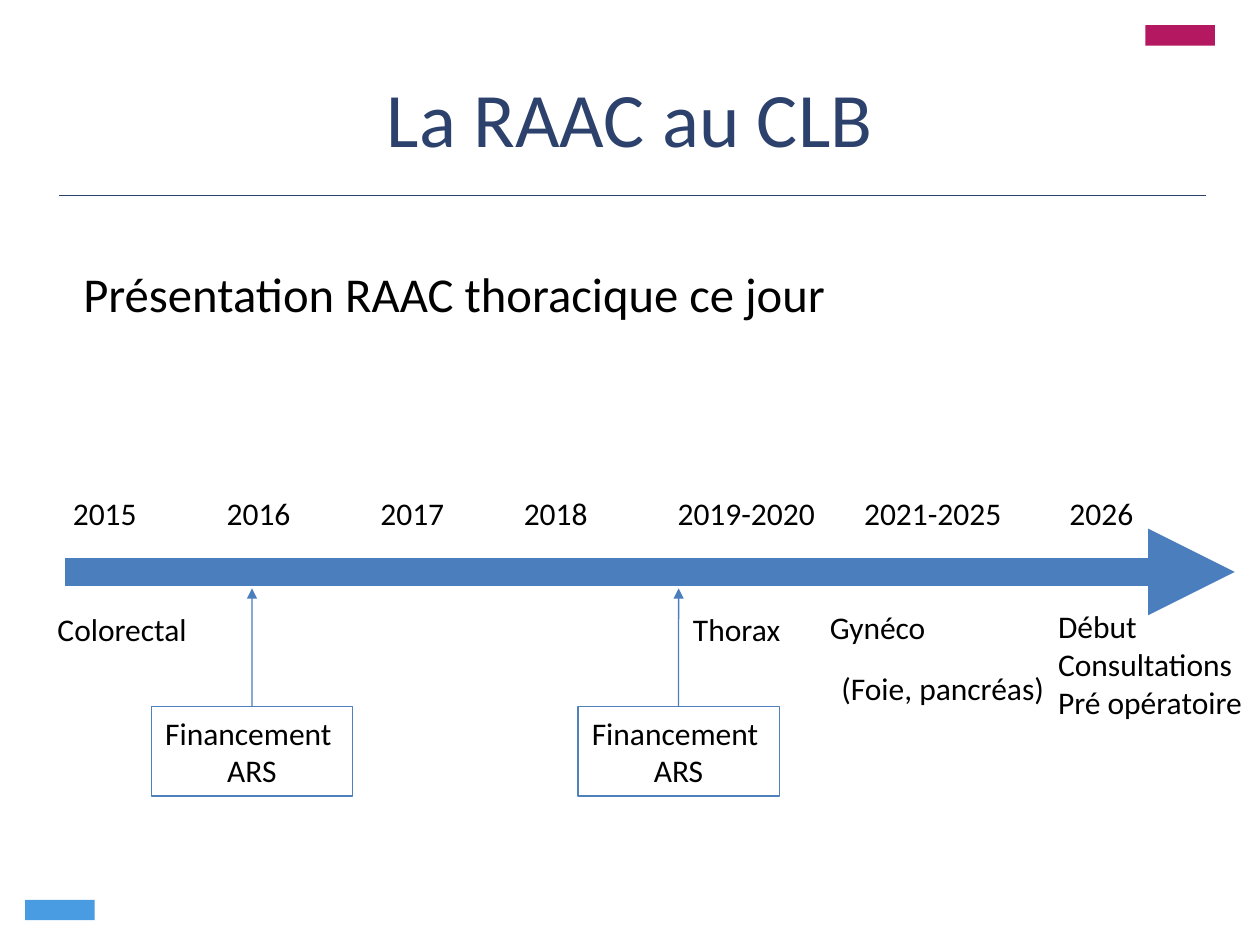
import pptx
import pptx.util
import pptx.dml.color
import pptx.enum.shapes
import pptx.enum.text
import pptx.oxml.ns
from lxml import etree
from pptx.util import Cm, Pt


def rgb(value):
    return pptx.dml.color.RGBColor.from_string(value)


class SlideBuilder:
    font = "Calibri"
    ink = "000000"
    navy = "2C426C"
    blue = "4B7EBC"
    outline = "4F81BD"
    size = 18

    def __init__(self, s):
        self.s = s

    def set_text(self, tf, lines, size=None, color=None, align=None):
        tf.text = "\n".join(lines)
        for p in tf.paragraphs:
            p.font.name = self.font
            p.font.size = Pt(size or self.size)
            p.font.color.rgb = rgb(color or self.ink)
            p.alignment = align

    def title(self, text, left, top, width, height):
        sp = self.s.shapes.title
        sp.left, sp.top, sp.width, sp.height = Cm(left), Cm(top), Cm(width), Cm(height)
        sp.text_frame.vertical_anchor = pptx.enum.text.MSO_ANCHOR.MIDDLE
        self.set_text(sp.text_frame, [text], 44, self.navy, pptx.enum.text.PP_ALIGN.CENTER)

    def text(self, lines, left, top, width, height=1.02, size=None, wrap=False):
        sp = self.s.shapes.add_textbox(Cm(left), Cm(top), Cm(width), Cm(height))
        tf = sp.text_frame
        tf.word_wrap = wrap
        tf.auto_size = pptx.enum.text.MSO_AUTO_SIZE.SHAPE_TO_FIT_TEXT
        self.set_text(tf, lines, size)
        return tf

    def rect(self, left, top, width, height, fill=None, line=None):
        sp = self.s.shapes.add_shape(
            pptx.enum.shapes.MSO_SHAPE.RECTANGLE, Cm(left), Cm(top), Cm(width), Cm(height))
        sp.shadow.inherit = False
        if fill:
            sp.fill.solid()
            sp.fill.fore_color.rgb = rgb(fill)
        else:
            sp.fill.background()
        if line:
            sp.line.color.rgb = rgb(line)
            sp.line.width = Pt(0.75)
        else:
            sp.line.fill.background()
        return sp

    def box(self, lines, left, top, width, height):
        sp = self.rect(left, top, width, height, line=self.outline)
        tf = sp.text_frame
        tf.word_wrap = False
        tf.auto_size = pptx.enum.text.MSO_AUTO_SIZE.SHAPE_TO_FIT_TEXT
        self.set_text(tf, lines, align=pptx.enum.text.PP_ALIGN.CENTER)
        return sp

    def line(self, x1, y1, x2, y2, color, width, arrow=False):
        c = self.s.shapes.add_connector(
            pptx.enum.shapes.MSO_CONNECTOR.STRAIGHT, Cm(x1), Cm(y1), Cm(x2), Cm(y2))
        c.line.color.rgb = rgb(color)
        c.line.width = Pt(width)
        sppr = c.element.spPr
        if arrow:
            ln = sppr.find(pptx.oxml.ns.qn("a:ln"))
            etree.SubElement(ln, pptx.oxml.ns.qn("a:tailEnd"), type="triangle")
        etree.SubElement(sppr, pptx.oxml.ns.qn("a:effectLst"))
        return c


def main():
    prs = pptx.Presentation()
    prs.slide_width, prs.slide_height = Cm(25.4), Cm(19.05)
    b = SlideBuilder(prs.slides.add_slide(prs.slide_layouts[5]))

    b.rect(23.09, 0.51, 1.4, 0.41, fill="B41860")
    b.rect(0.51, 18.14, 1.4, 0.41, fill="499CE1")
    b.line(1.19, 3.94, 24.31, 3.94, b.navy, 0.25)
    b.title("La RAAC au CLB", 1.27, 0.76, 22.86, 3.18)

    tf = b.text(["Présentation RAAC thoracique ce jour"], 1.27, 5, 22.4, 2.31, size=48, wrap=True)
    tf.margin_left = Cm(0.41)
    tf.paragraphs[0].runs[0]._r.get_or_add_rPr().set("baseline", "30000")

    b.line(1.32, 11.53, 24.89, 11.53, b.blue, 16.5, arrow=True)
    years = [("2015", 1.22), ("2016", 4.32), ("2017", 7.42), ("2018", 10.31),
             ("2019-2020", 13.41), ("2021-2025", 17.17), ("2026", 21.31)]
    for year, left in years:
        b.text([year], left, 9.83, 3.3 if "-" in year else 1.8)

    b.text(["Colorectal"], 0.91, 12.17, 3.15)
    b.text(["Thorax"], 13.72, 12.17, 2.29)
    b.text(["Gynéco"], 16.48, 12.14, 2.46)
    b.text(["(Foie, pancréas)"], 16.71, 13.36, 4.65)
    b.text(["Début", "Consultations", "Pré opératoire"], 21.08, 12.12, 4.27, 2.57)

    box_top, box_width = 14.25, 4.06
    for left in (3.05, 11.65):
        sp = b.box(["Financement ", "ARS"], left, box_top, box_width, 1.8)
        x = left + box_width / 2
        c = b.line(x, box_top, x, 11.86, b.blue, 0.75, arrow=True)
        c.begin_connect(sp, 0)

    prs.save("out.pptx")


if __name__ == "__main__":
    main()
